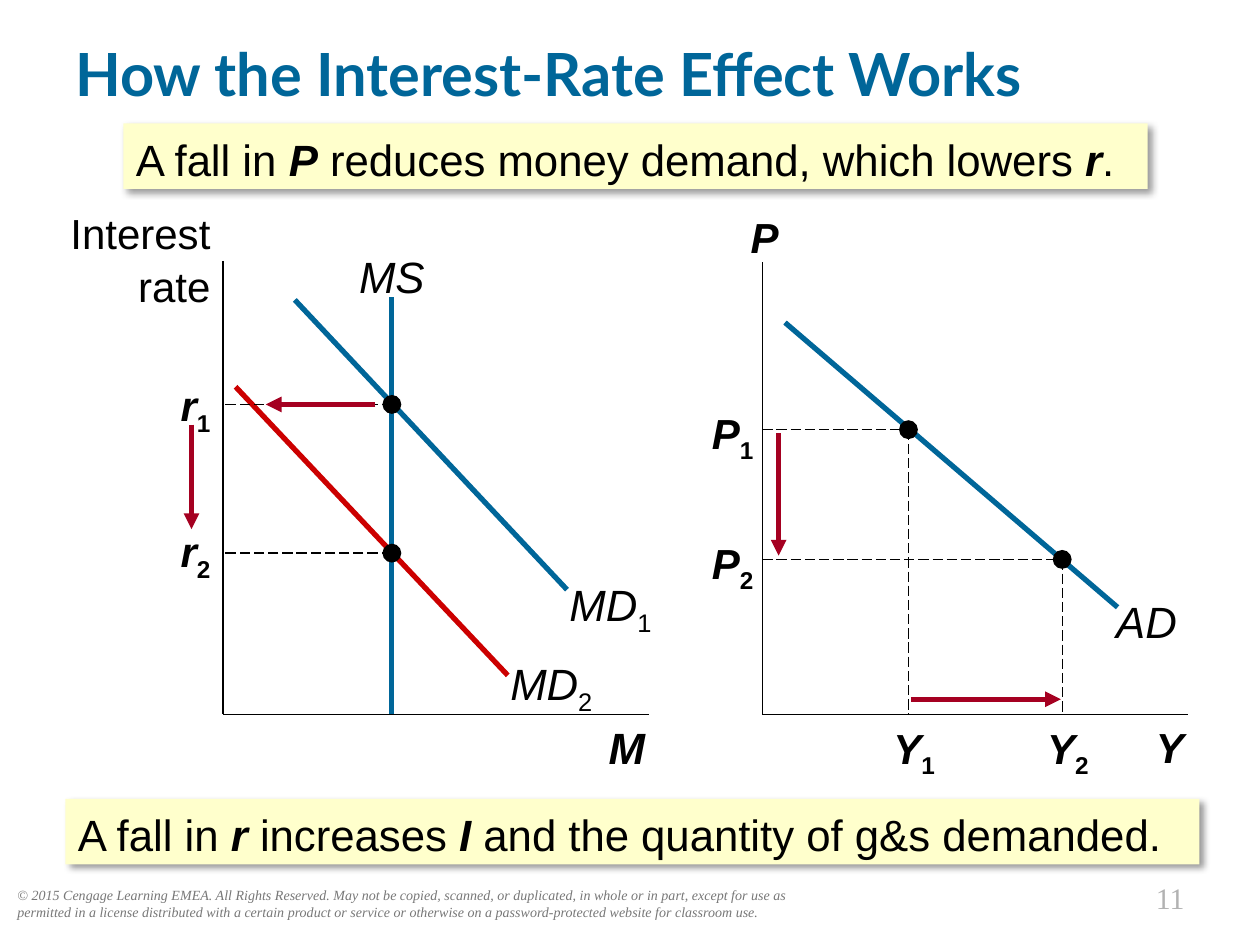
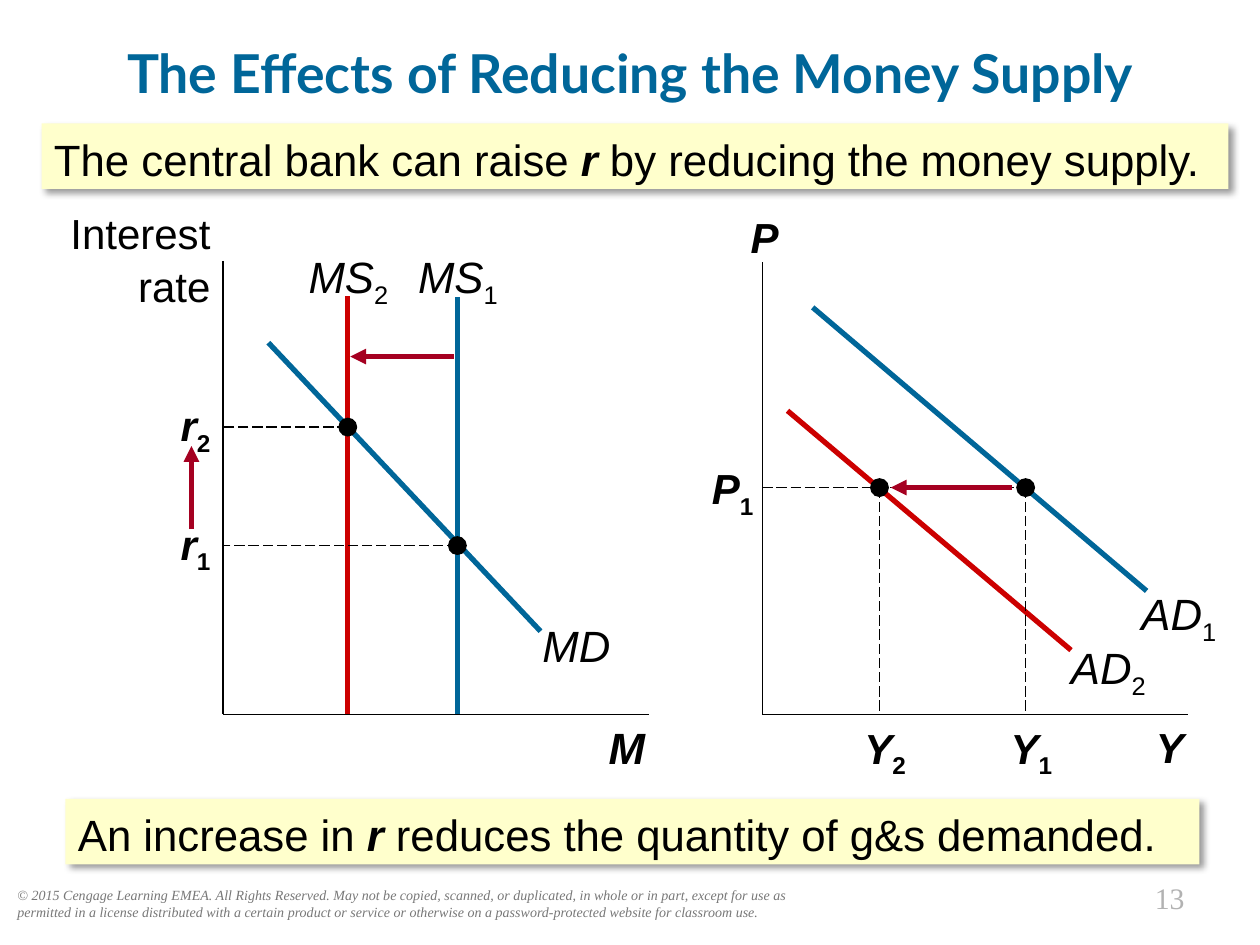
from pptx import Presentation
from pptx.dml.color import RGBColor as Color
from pptx.enum.dml import MSO_LINE as Dash
from pptx.enum.shapes import MSO_CONNECTOR as Connector, MSO_SHAPE as Shape
from pptx.enum.text import MSO_ANCHOR as Anchor, PP_ALIGN as Align
from pptx.oxml import parse_xml
from pptx.oxml.ns import nsdecls
from pptx.util import Inches, Pt


class Theme:
    black = Color.from_string("000000")
    blue = Color.from_string("006699")
    red = Color.from_string("CC0000")
    arrow = Color.from_string("A50021")
    band = Color.from_string("FFFFCC")
    gray = Color.from_string("777777")
    light = Color.from_string("B2B2B2")
    thin, thick = 0.75, 3
    spacing = 1.05
    title = dict(name="Lato", size=34, bold=True, color=blue)
    long_title = title | dict(size=30.6)
    body = dict(name="Arial", size=25, color=black)
    axis_name = body | dict(size=24)
    value = axis_name | dict(bold=True, italic=True)
    quantity = value | dict(size=25)
    curve = body | dict(italic=True)
    copyright = dict(name="Times New Roman", size=8, italic=True, color=gray)
    number = dict(name="Times New Roman", size=17, color=light)


COPYRIGHT = (
    "© 2015 Cengage Learning EMEA. All Rights Reserved. May not be copied, scanned, "
    "or duplicated, in whole or in part, except for use as permitted in a license "
    "distributed with a certain product or service or otherwise on a "
    "password-protected website for classroom use."
)
MONEY_AXIS, PRICE_AXIS, BASE = 1.77, 6.05, 5.67
DOT = 0.15
BAND_SHADOW = (
    f'<a:effectLst {nsdecls("a")}><a:outerShdw blurRad="{Pt(4)}" dist="{Pt(3)}" '
    'dir="2700000" algn="tl" rotWithShape="0"><a:srgbClr val="000000">'
    '<a:alpha val="40000"/></a:srgbClr></a:outerShdw></a:effectLst>'
)


def add_text(slide, box, text, style, align=Align.LEFT, inset=0.0, fill=None,
             anchor=Anchor.TOP, spacing=Theme.spacing):
    """Write text; *word* is bold italic and _1 is a subscript."""
    box = [Inches(length) for length in box]
    if fill is None:
        shape = slide.shapes.add_textbox(*box)
    else:
        shape = slide.shapes.add_shape(Shape.RECTANGLE, *box)
        shape.fill.solid()
        shape.fill.fore_color.rgb = fill
        shape.line.fill.background()
        shape._element.spPr.append(parse_xml(BAND_SHADOW))
    frame = shape.text_frame
    settings = dict(word_wrap=True, vertical_anchor=anchor,
                    margin_left=Inches(inset), margin_right=Inches(inset),
                    margin_top=Inches(inset / 2), margin_bottom=Inches(inset / 2))
    for name, value in settings.items():
        setattr(frame, name, value)
    paragraph = frame.paragraphs[0]
    paragraph.alignment = align
    paragraph.line_spacing = spacing
    for emphasis, piece in enumerate(text.split("*")):
        for subscript, part in enumerate(piece.split("_")):
            run = paragraph.add_run()
            run.text = part
            formats = dict(style)
            run.font.color.rgb = formats.pop("color")
            formats["size"] = Pt(formats["size"])
            if emphasis % 2:
                formats |= dict(bold=True, italic=True)
            if subscript:
                formats["italic"] = False
                run._r.get_or_add_rPr().set("baseline", "-25000")
            for name, value in formats.items():
                setattr(run.font, name, value)


def add_line(slide, start, end, color=Theme.black, width=Theme.thin,
             dashed=False, arrow=False):
    points = [Inches(length) for length in (*start, *end)]
    line = slide.shapes.add_connector(Connector.STRAIGHT, *points)
    line.line.width = Pt(width)
    line.line.color.rgb = color
    if dashed:
        line.line.dash_style = Dash.LONG_DASH
    if arrow:
        line.line._get_or_add_ln().append(
            parse_xml(f'<a:tailEnd {nsdecls("a")} type="triangle"/>'))
    line._element.spPr.append(parse_xml(f'<a:effectLst {nsdecls("a")}/>'))


# Curves: start, end, colour, label, label left, top, width, alignment
# Money points: x, y, label, label top
# Price points: x, y, price label (or None), its top, output label
SLIDES = [
    dict(
        number="11",
        title=("How the Interest-Rate Effect Works", (0.5, 0.22, 9, 0.71),
               Theme.title, Align.LEFT),
        top_band=(0.98, 8.13, "A fall in *P* reduces money demand, which lowers *r*."),
        bottom_band="A fall in *r* increases *I* and the quantity of g&s demanded.",
        curves=[
            ((6.23, 2.56), (8.87, 4.82), Theme.blue, "AD", 8.78, 4.7, 0.64, Align.CENTER),
            ((3.11, BASE), (3.11, 2.36), Theme.blue, "MS", 2.79, 1.96, 0.64, Align.CENTER),
            ((2.34, 2.38), (4.5, 4.68), Theme.blue, "MD_1", 4.45, 4.56, 0.79, Align.CENTER),
            ((1.87, 3.07), (4.03, 5.36), Theme.red, "MD_2", 3.98, 5.19, 0.79, Align.CENTER),
        ],
        money_points=[(3.11, 4.39, "r_2", 4.15), (3.11, 3.21, "r_1", 2.99)],
        price_points=[(7.21, 3.41, "P_1", 3.21, "Y_1"), (8.43, 4.44, "P_2", 4.24, "Y_2")],
        arrows=[
            ((6.18, 3.44), (6.18, 4.41)),
            ((7.23, 5.55), (8.42, 5.55)),
            ((2.98, 3.21), (2.11, 3.21)),
            ((1.52, 3.37), (1.52, 4.2)),
        ],
    ),
    dict(
        number="13",
        title=("The Effects of Reducing the Money Supply", (0, 0.22, 10, 0.71),
               Theme.long_title, Align.CENTER),
        top_band=(0.33, 9.42, "The central bank can raise *r* by reducing the money supply."),
        bottom_band="An increase in *r* reduces the quantity of g&s demanded.",
        curves=[
            ((6.45, 2.44), (9.1, 4.69), Theme.blue, "AD_1", 9.06, 4.63, 0.64, Align.LEFT),
            ((3.63, BASE), (3.63, 2.36), Theme.blue, "MS_1", 3.27, 1.96, 0.73, Align.CENTER),
            ((2.76, BASE), (2.76, 2.35), Theme.red, "MS_2", 2.4, 1.96, 0.73, Align.CENTER),
            ((2.13, 2.72), (4.29, 5.01), Theme.blue, "MD", 4.18, 4.89, 0.79, Align.CENTER),
            ((6.25, 3.26), (8.5, 5.16), Theme.red, "AD_2", 8.5, 5.06, 0.64, Align.LEFT),
        ],
        money_points=[(3.63, 4.33, "r_1", 4.09), (2.76, 3.39, "r_2", 3.15)],
        price_points=[(8.14, 3.87, "P_1", 3.65, "Y_1"), (6.98, 3.87, None, None, "Y_2")],
        arrows=[
            ((3.6, 2.83), (2.78, 2.83)),
            ((1.52, 4.2), (1.52, 3.54)),
            ((8.03, 3.87), (7.07, 3.87)),
        ],
    ),
]

presentation = Presentation()
presentation.slide_width, presentation.slide_height = Inches(10), Inches(7.5)

for content in SLIDES:
    slide = presentation.slides.add_slide(presentation.slide_layouts[6])

    # Footer and title
    add_text(slide, (0.04, 6.98, 6.43, 0.37), COPYRIGHT, Theme.copyright, inset=0.1)
    add_text(slide, (8.25, 6.92, 1.25, 0.38), content["number"], Theme.number,
             Align.RIGHT, inset=0.1)
    title, title_box, title_style, title_align = content["title"]
    add_text(slide, title_box, title, title_style, title_align, inset=0.1,
             anchor=Anchor.MIDDLE, spacing=1.0)

    # Axes and their names
    for axis, top in ((PRICE_AXIS, 2.08), (MONEY_AXIS, 2.07)):
        add_line(slide, (axis, top), (axis, BASE))
        add_line(slide, (axis, BASE), (axis + 3.38, BASE))
    add_text(slide, (9.08, 5.71, 0.41, 0.4), "Y", Theme.value, Align.CENTER)
    add_text(slide, (5.81, 1.66, 0.37, 0.4), "P", Theme.value, Align.RIGHT)
    add_text(slide, (4.73, 5.7, 0.49, 0.42), "M", Theme.quantity, Align.CENTER)
    add_text(slide, (0.4, 1.63, 1.27, 0.8), "Interest rate", Theme.axis_name, Align.RIGHT)

    # Curves
    for start, end, color, label, left, top, width, align in content["curves"]:
        add_line(slide, start, end, color, Theme.thick)
        add_text(slide, (left, top, width, 0.42), label, Theme.curve, align)

    # Guides and labels of the equilibrium points
    for x, y, rate, rate_top in content["money_points"]:
        add_line(slide, (x, y), (MONEY_AXIS, y), dashed=True)
        add_text(slide, (1.35, rate_top, 0.32, 0.4), rate, Theme.value, Align.RIGHT)
    for x, y, price, price_top, output in content["price_points"]:
        if price:
            add_line(slide, (PRICE_AXIS, y), (x, y), dashed=True)
            add_text(slide, (5.56, price_top, 0.42, 0.4), price, Theme.value, Align.RIGHT)
        add_line(slide, (x, y), (x, BASE), dashed=True)
        add_text(slide, (x - 0.21, 5.71, 0.42, 0.4), output, Theme.value, Align.RIGHT)

    # Equilibrium dots
    for x, y, *labels in content["money_points"] + content["price_points"]:
        dot = slide.shapes.add_shape(Shape.OVAL, Inches(x - DOT / 2), Inches(y - DOT / 2),
                                     Inches(DOT), Inches(DOT))
        dot.shadow.inherit = False
        dot.fill.solid()
        dot.fill.fore_color.rgb = Theme.black
        dot.line.fill.background()

    # Statement bands
    band_left, band_width, statement = content["top_band"]
    add_text(slide, (band_left, 0.98, band_width, 0.52), statement, Theme.body,
             inset=0.1, fill=Theme.band)
    add_text(slide, (0.52, 6.34, 9, 0.52), content["bottom_band"], Theme.body,
             inset=0.1, fill=Theme.band)

    # Arrows showing the shifts
    for start, end in content["arrows"]:
        add_line(slide, start, end, Theme.arrow, Theme.thick, arrow=True)

presentation.save("out.pptx")
